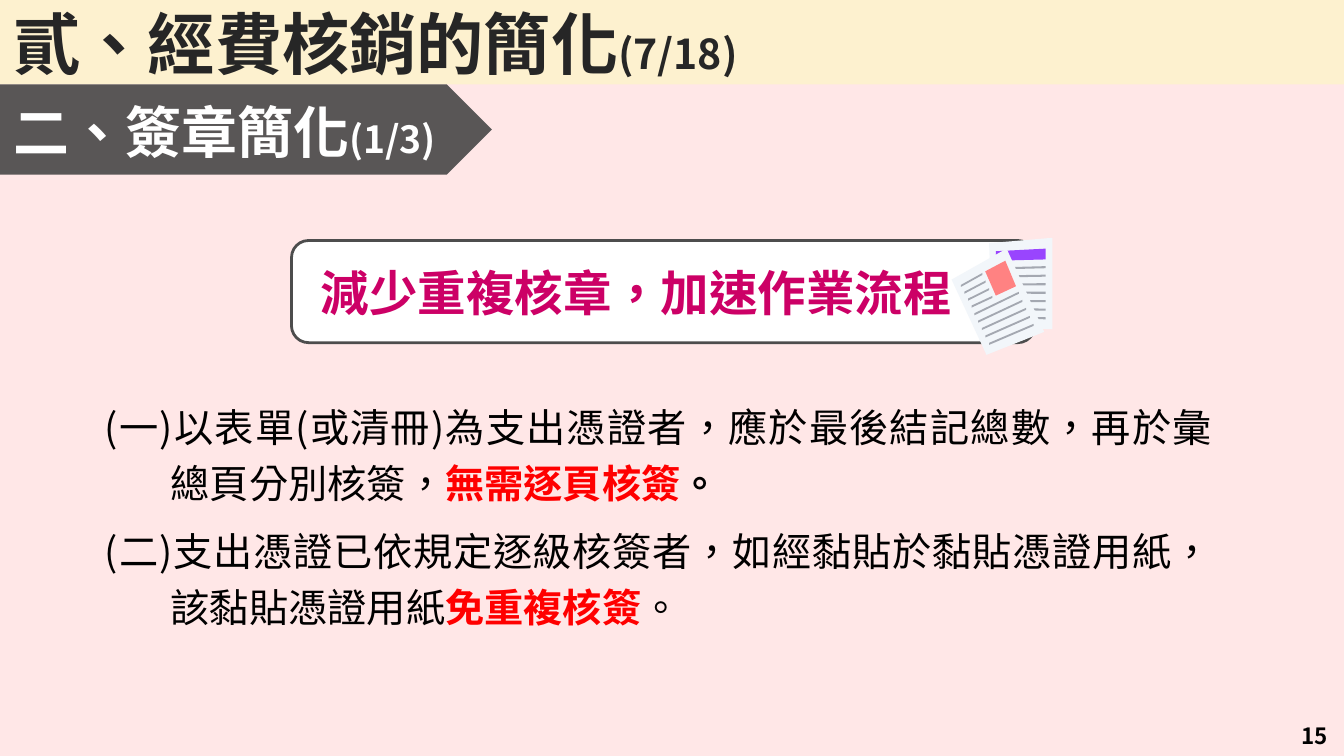
from dataclasses import dataclass

from lxml.etree import SubElement
from pptx import Presentation
from pptx.dml.color import RGBColor
from pptx.enum.lang import MSO_LANGUAGE_ID as Language
from pptx.enum.shapes import MSO_SHAPE as Preset
from pptx.enum.text import MSO_ANCHOR as Anchor, MSO_AUTO_SIZE as AutoSize, PP_ALIGN as Align
from pptx.oxml.ns import qn
from pptx.util import Pt

FONT = "Noto Sans CJK SC"
WIDTH, HEIGHT = 720, 405
Point = tuple[float, float]


@dataclass
class Run:
    text: str
    size: float
    color: str = "000000"
    bold: bool = False


@dataclass
class Sheet:
    """A paper sheet or a coloured block on it, given by its corners."""
    corners: list[Point]
    color: str


@dataclass
class TextLines:
    """Evenly stepped grey lines standing for printed text."""
    start: Point
    start_step: Point
    end: Point
    end_step: Point
    count: int
    thickness: float = 1.1


def rgb(color: str) -> RGBColor:
    return RGBColor.from_string(color)


def paint(shape, color: str, opacity: int = 100) -> None:
    shape.fill.solid()
    shape.fill.fore_color.rgb = rgb(color)
    if opacity < 100:
        color_element = shape.element.spPr.find(qn("a:solidFill"))[0]
        SubElement(color_element, qn("a:alpha")).set("val", str(opacity * 1000))


def place(shape, left: float, top: float, width: float, height: float) -> None:
    shape.left, shape.top = Pt(left), Pt(top)
    shape.width, shape.height = Pt(width), Pt(height)


def add_preset(shapes, preset, box, color: str, opacity: int = 100):
    shape = shapes.add_shape(preset, *map(Pt, box))
    shape.shadow.inherit = False
    paint(shape, color, opacity)
    shape.line.fill.background()
    return shape


def write(shape, paragraphs: list[list[Run]], *, align=Align.LEFT, anchor=Anchor.MIDDLE,
          left_inset: float = 7.2, vertical_inset: float = 3.6,
          hanging: float = 0, gap: float = 0, line_spacing: float = 1.0) -> None:
    frame = shape.text_frame
    frame.word_wrap = True
    frame.auto_size = AutoSize.NONE
    frame.vertical_anchor = anchor
    frame.margin_left, frame.margin_right = Pt(left_inset), Pt(7.2)
    frame.margin_top = frame.margin_bottom = Pt(vertical_inset)
    for index, runs in enumerate(paragraphs):
        paragraph = frame.add_paragraph() if index else frame.paragraphs[0]
        paragraph.alignment = align
        paragraph.line_spacing = line_spacing
        paragraph.space_before = Pt(gap if index else 0)
        properties = paragraph._p.get_or_add_pPr()
        properties.set("marL", str(Pt(hanging)))
        properties.set("indent", str(-Pt(hanging)))
        SubElement(properties, qn("a:buNone"))
        for item in runs:
            run = paragraph.add_run()
            run.text = item.text
            run.font.name = FONT
            run.font.size = Pt(item.size)
            run.font.bold = item.bold
            run.font.color.rgb = rgb(item.color)
            run.font.language_id = Language.TRADITIONAL_CHINESE
            SubElement(run.font._element, qn("a:ea")).set("typeface", FONT)


def draw_sheet(shapes, sheet: Sheet) -> None:
    first, *others = [(Pt(x), Pt(y)) for x, y in sheet.corners]
    builder = shapes.build_freeform(*first, scale=1.0)
    builder.add_line_segments(others, close=True)
    shape = builder.convert_to_shape()
    shape.shadow.inherit = False
    paint(shape, sheet.color)
    shape.line.fill.background()


def draw_text_lines(shapes, lines: TextLines) -> None:
    for index in range(lines.count):
        x1, y1 = (p + index * step for p, step in zip(lines.start, lines.start_step))
        x2, y2 = (p + index * step for p, step in zip(lines.end, lines.end_step))
        corners = [(x1, y1), (x2, y2), (x2, y2 + lines.thickness), (x1, y1 + lines.thickness)]
        draw_sheet(shapes, Sheet(corners, "A4A8B1"))


PAPERS = [
    # Back sheet with its header bar
    Sheet([(563.8, 127.4), (529.9, 130.3), (531.4, 175), (563.8, 176.4)], "F2F6FA"),
    Sheet([(560.2, 133.2), (533.5, 134.6), (533.5, 139.7), (560.2, 139)], "9945FE"),
    TextLines((534, 143.3), (0, 4.32), (560.2, 142.6), (0, 4.56), 7),
    # Front sheet with its illustration block
    Sheet([(539.3, 133.2), (509.8, 149.8), (528.5, 190.1), (559.4, 177.8)], "F2F6FA"),
    TextLines((522, 167.8), (1.98, 3.96), (545.8, 156.3), (1.98, 4.3), 5),
    TextLines((514.8, 152.6), (1.9, 3.7), (526.3, 146.2), (1.8, 4.1), 4),
    Sheet([(538.6, 139.7), (527.8, 145.4), (533.5, 158.4), (544.3, 153.4)], "FF8282"),
]

RULES = [
    [Run("(一)以表單(或清冊)為支出憑證者，應於最後結記總數，再於彙總頁分別核簽，", 21),
     Run("無需逐頁核簽", 21, "FF0000", True),
     Run("。", 21, bold=True)],
    [Run("(二)支出憑證已依規定逐級核簽者，如經黏貼於黏貼憑證用紙，該黏貼憑證用紙", 21),
     Run("免重複核簽", 21, "FF0000", True),
     Run("。", 21)],
]


def main() -> None:
    presentation = Presentation()
    presentation.slide_width, presentation.slide_height = Pt(WIDTH), Pt(HEIGHT)
    slide = presentation.slides.add_slide(presentation.slide_layouts[1])
    shapes = slide.shapes
    title, body = shapes.title, slide.placeholders[1]

    # Pink tint behind everything
    tint = add_preset(shapes, Preset.RECTANGLE, (0, 0, WIDTH, HEIGHT), "FFD1D1", 50)
    title.element.addprevious(tint.element)

    # Title band
    place(title, 0, 0, WIDTH, 45.2)
    paint(title, "FDF1CF")
    write(title, [[Run("貳、經費核銷的簡化", 36, "262626", True),
                   Run("(7/18)", 22, "262626", True)]], vertical_inset=0)

    # Section arrow
    add_preset(shapes, Preset.PENTAGON, (0, 45.2, 263.5, 48.3), "474747", 90)
    section = shapes.add_textbox(*map(Pt, (0, 46.8, 253.4, 46.8)))
    write(section, [[Run("二、簽章簡化", 30, "FFFFFF", True),
                     Run("(1/3)", 20, "FFFFFF", True)]])

    # Key message with paper sheets
    message = add_preset(shapes, Preset.ROUNDED_RECTANGLE, (156.2, 128.9, 398.2, 54.7), "FFFFFF")
    message.line.color.rgb = rgb("4D4D4D")
    message.line.width = Pt(1.5)
    write(message, [[Run("減少重複核章，加速作業流程", 26, "CC0066", True)]], left_inset=13)
    for part in PAPERS:
        if isinstance(part, Sheet):
            draw_sheet(shapes, part)
        else:
            draw_text_lines(shapes, part)

    # Rules
    place(body, 49, 207.4, 607.7, 163.4)
    write(body, RULES, align=Align.JUSTIFY, anchor=Anchor.TOP, hanging=35.3, gap=6,
          line_spacing=1.2)

    # Page number
    number = shapes.add_textbox(*map(Pt, (545.8, 322.6, 172.8, 82.4)))
    write(number, [[Run("15", 12, bold=True)]], align=Align.RIGHT, anchor=Anchor.BOTTOM)

    presentation.save("out.pptx")


if __name__ == "__main__":
    main()
